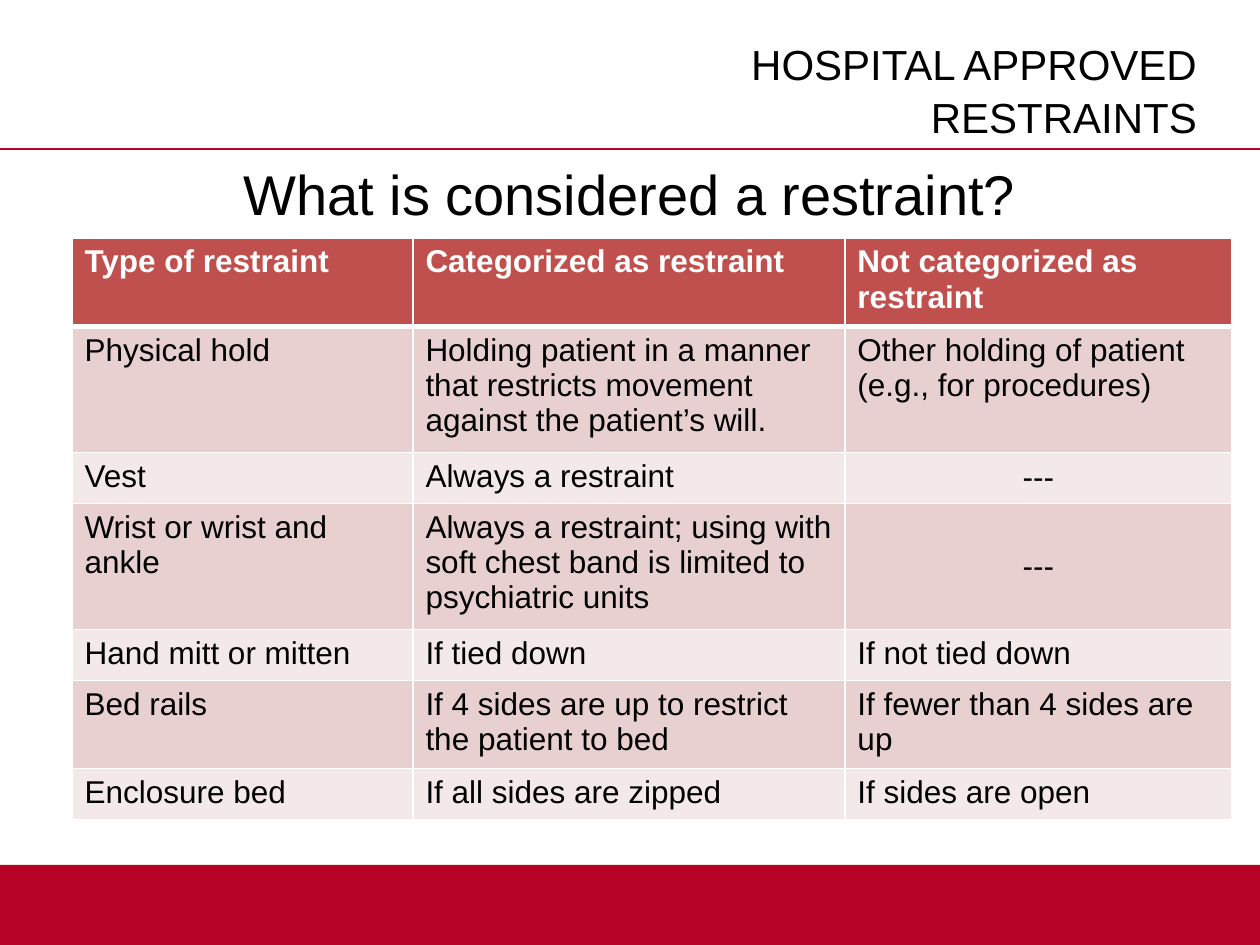
from lxml.etree import SubElement
from pptx import Presentation
from pptx.dml.color import RGBColor
from pptx.enum.shapes import MSO_CONNECTOR, MSO_SHAPE
from pptx.enum.text import MSO_ANCHOR, PP_ALIGN
from pptx.oxml.ns import qn
from pptx.util import Pt

SCALE = 914400 // 126
FONT = "Arial"
COLORS = {
    "brand": "B60225",
    "header": "C0504D",
    "odd": "E8D0D0",
    "even": "F4E9E9",
    "white": "FFFFFF",
    "black": "000000",
}
NONE = "---"
COLUMNS = [341, 432, 387]
LINE_HEIGHTS = {1: 51, 2: 83, 3: 118}

# Number of text lines in the row, then its cells
ROWS = [
    (2, ["Type of restraint", "Categorized as restraint", "Not categorized as restraint"]),
    (3, ["Physical hold",
         "Holding patient in a manner that restricts movement against the patient’s will.",
         "Other holding of patient (e.g., for procedures)"]),
    (1, ["Vest", "Always a restraint", NONE]),
    (3, ["Wrist or wrist and ankle",
         "Always a restraint; using with soft chest band is limited to psychiatric units",
         NONE]),
    (1, ["Hand mitt or mitten", "If tied down", "If not tied down"]),
    (2, ["Bed rails", "If 4 sides are up to restrict the patient to bed",
         "If fewer than 4 sides are up"]),
    (1, ["Enclosure bed", "If all sides are zipped", "If sides are open"]),
]


def px(*lengths):
    return [length * SCALE for length in lengths]


def color(name):
    return RGBColor.from_string(COLORS[name])


def add_span(para, text, size, ink="black", bold=False):
    span = para.add_run()
    span.text = text
    span.font.name = FONT
    span.font.size = Pt(size)
    span.font.bold = bold
    span.font.color.rgb = color(ink)


def add_band(page, *place):
    band = page.shapes.add_shape(MSO_SHAPE.RECTANGLE, *px(*place))
    band.shadow.inherit = False
    band.fill.solid()
    band.fill.fore_color.rgb = color("brand")
    band.line.fill.background()


def add_rule(page, *ends):
    rule = page.shapes.add_connector(MSO_CONNECTOR.STRAIGHT, *px(*ends))
    rule.line.color.rgb = color("brand")
    rule.line.width = Pt(1)
    SubElement(rule._element.spPr, qn("a:effectLst"))


def add_text(page, place, text, size, align, anchor, inset=0, spacing=1.0):
    frame = page.shapes.add_textbox(*px(*place)).text_frame
    frame.word_wrap = True
    frame.vertical_anchor = anchor
    frame.margin_left = frame.margin_right = 0
    frame.margin_top = frame.margin_bottom = inset * SCALE
    para = frame.paragraphs[0]
    para.alignment = align
    para.line_spacing = spacing
    add_span(para, text, size)


def set_borders(cell, top, bottom):
    properties = cell._tc.get_or_add_tcPr()
    for side, width in (("L", 1), ("R", 1), ("T", top), ("B", bottom)):
        line = SubElement(properties, qn(f"a:ln{side}"), w=str(Pt(width)))
        fill = SubElement(line, qn("a:solidFill"))
        SubElement(fill, qn("a:srgbClr"), val=COLORS["white"])


def fill_cell(cell, text, row):
    header = row == 0
    set_borders(cell, top=3 if row == 1 else 1, bottom=3 if header else 1)
    cell.fill.solid()
    cell.fill.fore_color.rgb = color("header" if header else "odd" if row % 2 else "even")
    para = cell.text_frame.paragraphs[0]
    if text == NONE:
        para.alignment = PP_ALIGN.CENTER
        cell.vertical_anchor = MSO_ANCHOR.MIDDLE
    add_span(para, text, 18, "white" if header else "black", header)


def add_restraint_table(page, left, top):
    heights = [LINE_HEIGHTS[lines] for lines, _ in ROWS]
    place = px(left, top, sum(COLUMNS), sum(heights))
    table = page.shapes.add_table(len(ROWS), len(COLUMNS), *place).table
    for column, width in zip(table.columns, px(*COLUMNS)):
        column.width = width
    for row, height in zip(table.rows, px(*heights)):
        row.height = height
    for row, (_, texts) in enumerate(ROWS):
        for column, text in enumerate(texts):
            fill_cell(table.cell(row, column), text, row)


def main():
    deck = Presentation()
    deck.slide_width, deck.slide_height = px(1260, 945)
    page = deck.slides.add_slide(deck.slide_layouts[6])

    # Page frame
    add_band(page, 0, 865, 1260, 80)
    add_rule(page, 0, 149, 1260, 149)

    # Headings
    add_text(page, (588, 29, 609, 121), "HOSPITAL APPROVED RESTRAINTS", 24,
             PP_ALIGN.RIGHT, MSO_ANCHOR.TOP, inset=6, spacing=1.06)
    add_text(page, (63, 150, 1134, 87), "What is considered a restraint?", 32,
             PP_ALIGN.CENTER, MSO_ANCHOR.MIDDLE)

    # Restraint categories
    add_restraint_table(page, 72, 238)

    deck.save("out.pptx")


if __name__ == "__main__":
    main()
